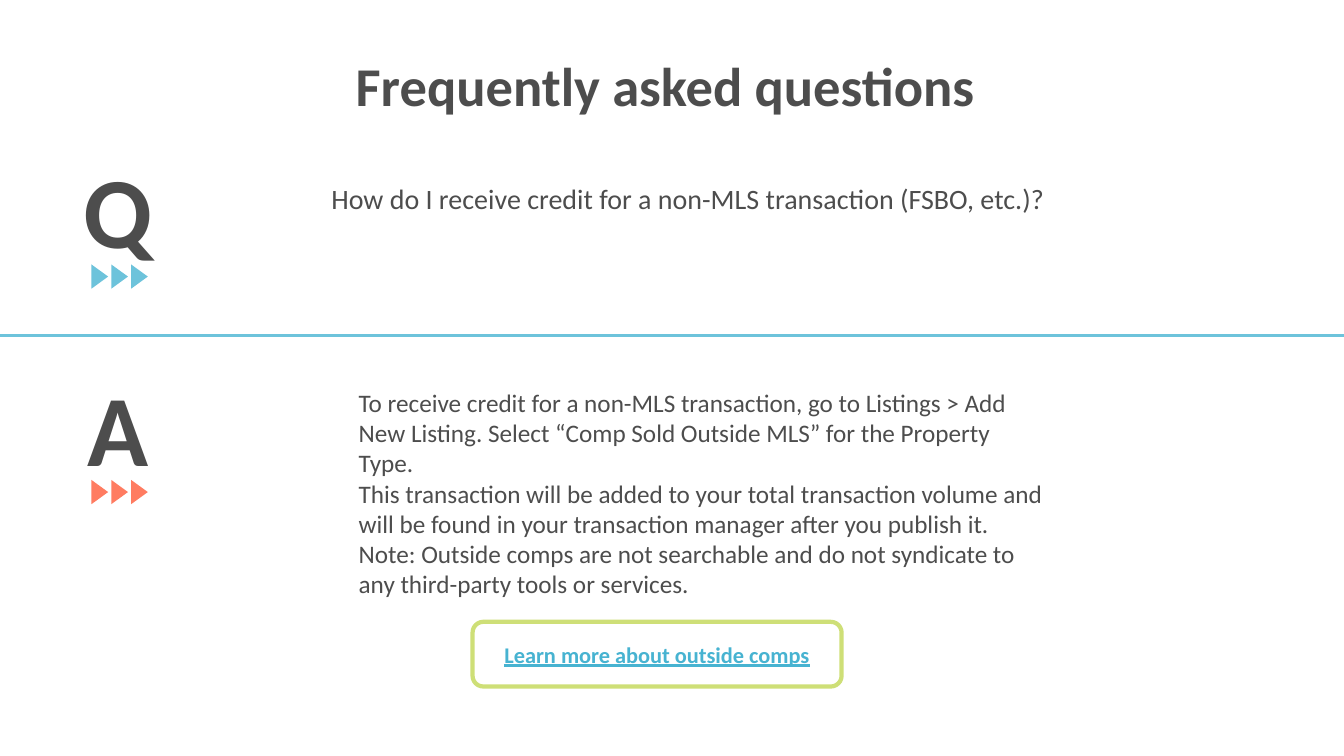
from dataclasses import dataclass

from lxml.etree import SubElement
from pptx import Presentation
from pptx.dml.color import RGBColor
from pptx.enum.shapes import MSO_CONNECTOR as Connector, MSO_SHAPE as Shape
from pptx.enum.text import MSO_ANCHOR as Anchor, PP_ALIGN as Align
from pptx.oxml.ns import qn
from pptx.util import Cm, Pt


@dataclass(frozen=True)
class Theme:
    font: str = "Calibri"
    text: str = "4D4D4D"
    blue: str = "6DC3DB"
    coral: str = "FF7C61"
    green: str = "CEDF77"
    link: str = "47B3D1"
    white: str = "FFFFFF"
    title_size: int = 39
    letter_size: int = 72
    question_size: int = 20
    answer_size: int = 18
    link_size: int = 16


THEME = Theme()
PAGE_WIDTH, PAGE_HEIGHT = 33.87, 19.05

ANSWER = [
    "To receive credit for a non-MLS transaction, go to Listings > Add New Listing. "
    "Select “Comp Sold Outside MLS” for the Property Type.",
    "This transaction will be added to your total transaction volume and "
    "will be found in your transaction manager after you publish it.",
    "Note: Outside comps are not searchable and do not syndicate to "
    "any third-party tools or services.",
]


def rgb(color):
    return RGBColor.from_string(color)


def write(frame, *lines, size, color=THEME.text, bold=False, underline=False,
          align=Align.LEFT, spacing=1.0, anchor=Anchor.TOP):
    """Fill a text frame with one paragraph per line, all in one format."""
    frame.word_wrap = True
    frame.vertical_anchor = anchor
    for index, line in enumerate(lines):
        para = frame.add_paragraph() if index else frame.paragraphs[0]
        para.alignment = align
        para.line_spacing = spacing
        span = para.add_run()
        span.text = line
        font = span.font
        font.name, font.size = THEME.font, Pt(size)
        font.bold, font.underline = bold, underline
        font.color.rgb = rgb(color)


def add_text(page, left, top, width, height, *lines, **style):
    box = page.shapes.add_textbox(Cm(left), Cm(top), Cm(width), Cm(height))
    write(box.text_frame, *lines, **style)


def add_arrows(page, left, top, color):
    """Group three triangles that point right."""
    group = page.shapes.add_group_shape()
    for index in range(3):
        arrow = group.shapes.add_shape(Shape.ISOSCELES_TRIANGLE, Cm(left + index * 0.5),
                                       Cm(top), Cm(0.61), Cm(0.42))
        arrow.rotation = 90
        arrow.shadow.inherit = False
        arrow.fill.solid()
        arrow.fill.fore_color.rgb = rgb(color)
        arrow.line.fill.background()


def add_divider(page, top):
    divider = page.shapes.add_connector(Connector.STRAIGHT, Cm(0), Cm(top),
                                        Cm(PAGE_WIDTH), Cm(top))
    divider.line.color.rgb = rgb(THEME.blue)
    divider.line.width = Pt(2.25)
    SubElement(divider._element.spPr, qn("a:effectLst"))


def add_button(page, left, top, width, height, label):
    button = page.shapes.add_shape(Shape.ROUNDED_RECTANGLE, Cm(left), Cm(top),
                                   Cm(width), Cm(height))
    button.shadow.inherit = False
    button.fill.solid()
    button.fill.fore_color.rgb = rgb(THEME.white)
    button.line.color.rgb = rgb(THEME.green)
    button.line.width = Pt(3)
    write(button.text_frame, label, size=THEME.link_size, color=THEME.link, bold=True,
          underline=True, align=Align.CENTER, anchor=Anchor.MIDDLE)


def main():
    deck = Presentation()
    deck.slide_width, deck.slide_height = Cm(PAGE_WIDTH), Cm(PAGE_HEIGHT)
    page = deck.slides.add_slide(deck.slide_layouts[6])

    # Title
    add_text(page, 1.83, 1.37, 29.87, 1.96, "Frequently asked questions",
             size=THEME.title_size, bold=True, align=Align.CENTER, spacing=0.9)

    # Question
    add_text(page, 1.85, 3.61, 1.42, 3.33, "Q", size=THEME.letter_size, bold=True)
    add_arrows(page, 2.21, 6.76, THEME.blue)
    add_text(page, 8.1, 4.55, 19.1, 2.62,
             "How do I receive credit for a non-MLS transaction (FSBO, etc.)?",
             size=THEME.question_size, spacing=0.9)

    add_divider(page, 8.46)

    # Answer
    add_text(page, 1.96, 9.09, 2.24, 3.33, "A", size=THEME.letter_size, bold=True)
    add_arrows(page, 2.21, 12.19, THEME.coral)
    add_text(page, 8.79, 9.63, 17.81, 5.64, *ANSWER, size=THEME.answer_size)
    add_button(page, 11.91, 15.67, 9.3, 1.63, "Learn more about outside comps")

    deck.save("out.pptx")


if __name__ == "__main__":
    main()
